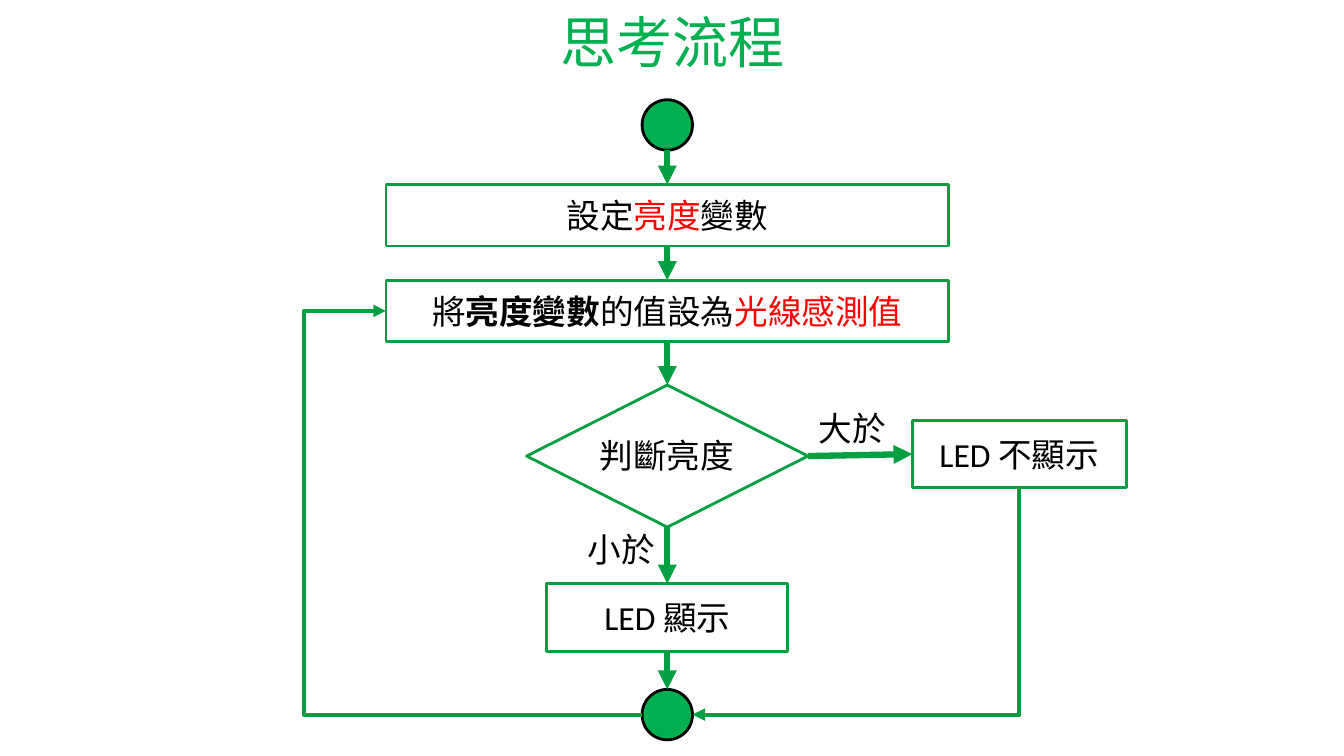
from lxml import etree
from pptx import Presentation
from pptx.dml.color import RGBColor
from pptx.enum.shapes import MSO_CONNECTOR, MSO_SHAPE
from pptx.enum.text import MSO_ANCHOR, PP_ALIGN
from pptx.oxml.ns import qn
from pptx.util import Inches, Pt

PROCESS = MSO_SHAPE.FLOWCHART_PROCESS
DECISION = MSO_SHAPE.FLOWCHART_DECISION
TERMINAL = MSO_SHAPE.FLOWCHART_CONNECTOR
STRAIGHT, ELBOW = MSO_CONNECTOR.STRAIGHT, MSO_CONNECTOR.ELBOW
CENTER, LEFT, MIDDLE = PP_ALIGN.CENTER, PP_ALIGN.LEFT, MSO_ANCHOR.MIDDLE

WIDTH, HEIGHT = Inches(13.33), Inches(7.5)
GREEN, BRIGHT_GREEN, BLACK, RED = "049F41", "00B050", "000000", "FF0000"
AXIS = 49.65
STEP_SIZE = (41.86, 8.13)
CIRCLE_SIZE = (3.75, 6.67)
LABEL_SIZE = (6.6, 6.67)


def color(hex_value):
    """Turn a hex string into a colour."""
    return RGBColor.from_string(hex_value)


def across(percent):
    """Turn a percentage of the slide width into a length."""
    return round(WIDTH * percent / 100)


def down(percent):
    """Turn a percentage of the slide height into a length."""
    return round(HEIGHT * percent / 100)


def apply(target, values):
    """Set each attribute named in a dict."""
    for name, value in values.items():
        setattr(target, name, value)


def write(frame, runs, size=24, alignment=CENTER):
    """Fill a text frame with one paragraph of (text, colour, bold) runs."""
    paragraph = frame.paragraphs[0]
    paragraph.alignment = alignment
    for text, hex_value, bold in runs:
        run = paragraph.add_run()
        run.text = text
        apply(run.font, {"name": "Calibri", "size": Pt(size), "bold": bold})
        run.font.color.rgb = color(hex_value)


def add_title(slide, text):
    """Place the slide title across the top."""
    title = slide.shapes.title
    apply(title, {"left": across(6.9), "top": down(-0.13),
                  "width": across(86.27), "height": down(11.07)})
    title.text_frame.vertical_anchor = MIDDLE
    write(title.text_frame, [(text, BRIGHT_GREEN, False)], size=40)


def add_node(chart, kind, center, size, runs=(), fill=None, outline=GREEN):
    """Add a flowchart shape centred on a point."""
    (x, y), (width, height) = center, size
    shape = chart.shapes.add_shape(kind, across(x - width / 2), down(y - height / 2),
                                   across(width), down(height))
    shape.shadow.inherit = False
    if fill:
        shape.fill.solid()
        shape.fill.fore_color.rgb = color(fill)
    else:
        shape.fill.background()
    shape.line.color.rgb = color(outline)
    shape.line.width = Pt(2)
    shape.text_frame.vertical_anchor = MIDDLE
    if runs:
        write(shape.text_frame, runs)
    return shape


def add_label(chart, text, corner, size, wrap=True):
    """Add a plain text label at a top left corner."""
    box = chart.shapes.add_textbox(across(corner[0]), down(corner[1]),
                                   across(size[0]), down(size[1]))
    box.text_frame.word_wrap = wrap
    write(box.text_frame, [(text, BLACK, False)], alignment=LEFT)


def side(shape, name):
    """Return the middle of one side of a shape."""
    middle_x = shape.left + shape.width // 2
    middle_y = shape.top + shape.height // 2
    return {"top": (middle_x, shape.top),
            "bottom": (middle_x, shape.top + shape.height),
            "left": (shape.left, middle_y),
            "right": (shape.left + shape.width, middle_y)}[name]


def add_arrow(chart, start, end, kind=STRAIGHT, width=4.5):
    """Add a green connector with a triangular head at its end."""
    arrow = chart.shapes.add_connector(kind, *start, *end)
    arrow.line.color.rgb = color(GREEN)
    arrow.line.width = Pt(width)
    etree.SubElement(arrow.line._get_or_add_ln(), qn("a:tailEnd"), type="triangle")
    etree.SubElement(arrow._element.spPr, qn("a:effectLst"))
    return arrow


def add_loop_back(chart, start, end, reach):
    """Add a three-part arrow that swings out past its end point."""
    arrow = add_arrow(chart, start, end, ELBOW, 3)
    guides = arrow._element.spPr.prstGeom.get_or_add_avLst()
    etree.SubElement(guides, qn("a:gd"), name="adj1", fmla=f"val {round(reach * 100000)}")


def add_down_then_left(chart, start, end):
    """Add a two-part arrow that runs down and then left."""
    center_x, center_y = (start[0] + end[0]) // 2, (start[1] + end[1]) // 2
    half_drop, half_run = (end[1] - start[1]) // 2, (start[0] - end[0]) // 2
    arrow = add_arrow(chart, (center_x - half_drop, center_y - half_run),
                      (center_x + half_drop, center_y + half_run), ELBOW, 3)
    properties = arrow._element.spPr
    properties.prstGeom.set("prst", "bentConnector2")
    properties.find(qn("a:xfrm")).set("rot", str(90 * 60000))


def add_flowchart(slide):
    """Draw the brightness flowchart as one group."""
    chart = slide.shapes.add_group_shape()
    start, finish = [add_node(chart, TERMINAL, (AXIS, y), CIRCLE_SIZE,
                              fill=BRIGHT_GREEN, outline=BLACK) for y in (16.53, 94.53)]
    declare = add_node(chart, PROCESS, (AXIS, 28.47), STEP_SIZE, [
        ("設定", BLACK, False), ("亮度", RED, False), ("變數", BLACK, False)])
    measure = add_node(chart, PROCESS, (AXIS, 41.13), STEP_SIZE, [
        ("將", BLACK, False), ("亮度變數", BLACK, True),
        ("的值設為", BLACK, False), ("光線感測值", RED, False)])
    decide = add_node(chart, DECISION, (AXIS, 60.33), (20.93, 18.8))
    light_on = add_node(chart, PROCESS, (AXIS, 81.67), (17.93, 8.93),
                        [("LED 顯示", BLACK, False)])
    light_off = add_node(chart, PROCESS, (75.84, 60.07), (15.9, 8.93),
                         [("LED 不顯示", BLACK, False)])

    add_label(chart, "判斷亮度", (43.89, 56.93), (11.63, 6.67), wrap=False)
    add_label(chart, "小於", (42.98, 69.33), LABEL_SIZE)
    add_label(chart, "大於", (60.16, 53.33), LABEL_SIZE)

    steps = [start, declare, measure, decide, light_on, finish]
    for upper, lower in zip(steps, steps[1:]):
        add_arrow(chart, side(upper, "bottom"), side(lower, "top"))
    add_arrow(chart, side(decide, "right"), side(light_off, "left"))
    add_loop_back(chart, side(finish, "left"), side(measure, "left"), 1.32)
    add_down_then_left(chart, side(light_off, "bottom"), side(finish, "right"))


def main():
    """Build the slide and save it."""
    presentation = Presentation()
    apply(presentation, {"slide_width": WIDTH, "slide_height": HEIGHT})
    slide = presentation.slides.add_slide(presentation.slide_layouts[5])
    add_title(slide, "思考流程")
    add_flowchart(slide)
    presentation.save("out.pptx")


if __name__ == "__main__":
    main()
